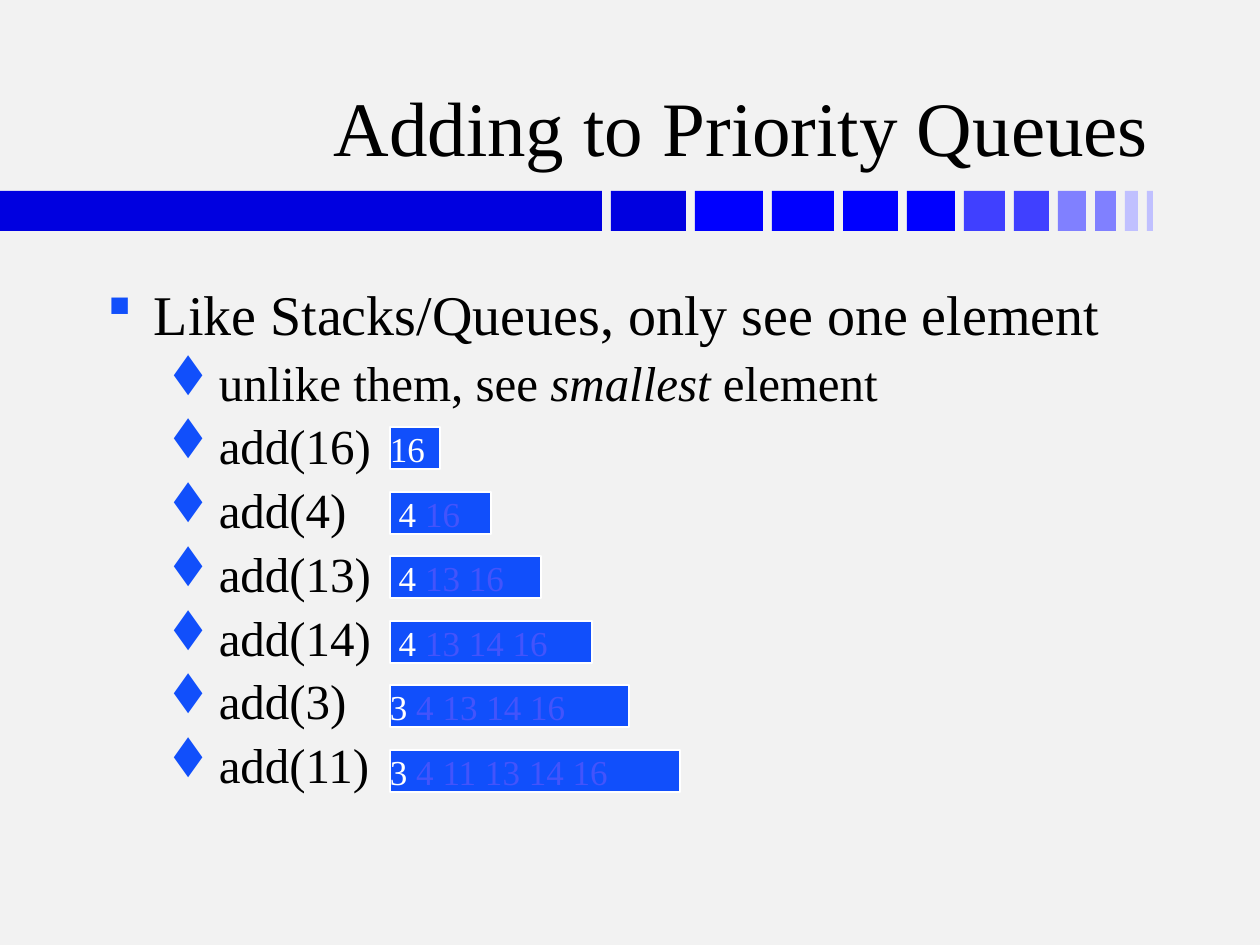
from lxml.etree import SubElement
from pptx import Presentation
from pptx.dml.color import RGBColor
from pptx.enum.shapes import MSO_SHAPE
from pptx.enum.text import MSO_ANCHOR, PP_ALIGN
from pptx.oxml.ns import qn
from pptx.util import Emu, Pt

FONT, BULLET_FONT = "Times New Roman", "Wingdings"
SQUARE_BULLET, DIAMOND_BULLET = "§", "t"
BLACK, WHITE, BLUE, MUTED = "000000", "FFFFFF", "114FFB", "4354FB"

BAR_GAP = 9
BARS = [
    (602, "0000E0"), (75, "0000E0"), (68, "0000FF"), (62, "0000FF"),
    (55, "0000FF"), (48, "0000FF"), (41, "4040FF"), (35, "4040FF"),
    (28, "8080FF"), (21, "8080FF"), (13, "C0C0FF"), (6, "C0C0FF"),
]
QUEUES = [
    ("add(16)", 50, "16", ""),
    ("add(4)", 101, " 4 ", "16"),
    ("add(13)", 151, " 4 ", "13 16"),
    ("add(14)", 202, " 4 ", "13 14 16"),
    ("add(3)", 239, "3 ", "4 13 14 16"),
    ("add(11)", 290, "3 ", "4 11 13 14 16"),
]
ROW_TOP, ROW_PITCH = 427, 64.6


def px(length):
    """Turn pixels into EMU."""
    return Emu(round(length * 914400 / 126))


def color(value):
    """Turn a hex string into a colour."""
    return RGBColor.from_string(value)


def add_run(paragraph, text, size=28, fill=BLACK, italic=False):
    """Append formatted text to a paragraph."""
    run = paragraph.add_run()
    run.text = text
    run.font.name = FONT
    run.font.size = Pt(size)
    run.font.italic = italic
    run.font.color.rgb = color(fill)


def add_rectangle(slide, left, top, width, height, fill, line=None):
    """Draw a flat rectangle with an optional outline."""
    shape = slide.shapes.add_shape(
        MSO_SHAPE.RECTANGLE, px(left), px(top), px(width), px(height))
    shape.shadow.inherit = False
    shape.fill.solid()
    shape.fill.fore_color.rgb = color(fill)
    if line:
        shape.line.color.rgb = color(line)
        shape.line.width = Pt(1)
    else:
        shape.line.fill.background()
    return shape


def set_margins(frame, horizontal, vertical):
    """Set the inner margins of a text frame."""
    frame.margin_left = frame.margin_right = px(horizontal)
    frame.margin_top = frame.margin_bottom = px(vertical)


def add_text_frame(slide, left, top, width, height, anchor=MSO_ANCHOR.TOP):
    """Add a wrapping text box and return its frame."""
    box = slide.shapes.add_textbox(px(left), px(top), px(width), px(height))
    frame = box.text_frame
    frame.word_wrap = True
    frame.vertical_anchor = anchor
    set_margins(frame, 13, 6)
    return frame


def set_bullet(paragraph, symbol, margin, hanging, space_percent):
    """Give a paragraph a coloured bullet, hanging indent and space before."""
    properties = paragraph._p.get_or_add_pPr()
    properties.set("marL", str(px(margin)))
    properties.set("indent", str(-px(hanging)))
    space = SubElement(properties, qn("a:spcBef"))
    SubElement(space, qn("a:spcPct"), val=str(space_percent * 1000))
    bullet_color = SubElement(properties, qn("a:buClr"))
    SubElement(bullet_color, qn("a:srgbClr"), val=BLUE)
    SubElement(properties, qn("a:buFont"),
               typeface=BULLET_FONT, pitchFamily="2", charset="2")
    SubElement(properties, qn("a:buChar"), char=symbol)


def add_sub_item(frame):
    """Append an empty second-level bullet paragraph."""
    paragraph = frame.add_paragraph()
    paragraph.level = 1
    set_bullet(paragraph, DIAMOND_BULLET, 102, 39, 10)
    return paragraph


def add_bars(slide):
    """Draw the fading row of bars under the title."""
    left = 0
    for width, fill in BARS:
        add_rectangle(slide, left, 191, width, 40, fill)
        left += width + BAR_GAP


def add_title(slide, text):
    """Add the right-aligned title."""
    frame = add_text_frame(slide, 93, 23, 1069, 155, MSO_ANCHOR.BOTTOM)
    paragraph = frame.paragraphs[0]
    paragraph.alignment = PP_ALIGN.RIGHT
    add_run(paragraph, text, size=44)


def add_body(slide):
    """Add the bulleted list of operations."""
    frame = add_text_frame(slide, 94, 274, 1071, 567)
    heading = frame.paragraphs[0]
    set_bullet(heading, SQUARE_BULLET, 47, 47, 20)
    add_run(heading, "Like Stacks/Queues, only see one element", size=32)
    remark = add_sub_item(frame)
    add_run(remark, "unlike them, see ")
    add_run(remark, "smallest", italic=True)
    add_run(remark, " element")
    for operation, *_ in QUEUES:
        add_run(add_sub_item(frame), operation)


def add_queue(slide, top, width, visible, hidden):
    """Draw a queue with its visible first element and muted others."""
    shape = add_rectangle(slide, 390, top, width, 42, BLUE, line=WHITE)
    frame = shape.text_frame
    frame.vertical_anchor = MSO_ANCHOR.MIDDLE
    set_margins(frame, 0, 0)
    paragraph = frame.paragraphs[0]
    paragraph.alignment = PP_ALIGN.LEFT
    add_run(paragraph, visible, size=20, fill=WHITE)
    if hidden:
        add_run(paragraph, hidden, size=20, fill=MUTED)


def main():
    """Build and save the slide."""
    presentation = Presentation()
    presentation.slide_width = px(1260)
    presentation.slide_height = px(945)
    slide = presentation.slides.add_slide(presentation.slide_layouts[6])
    slide.background.fill.solid()
    slide.background.fill.fore_color.rgb = color("F2F2F2")
    add_bars(slide)
    add_title(slide, "Adding to Priority Queues")
    add_body(slide)
    for row, (_, width, visible, hidden) in enumerate(QUEUES):
        add_queue(slide, round(ROW_TOP + row * ROW_PITCH), width, visible, hidden)
    presentation.save("out.pptx")


if __name__ == "__main__":
    main()
